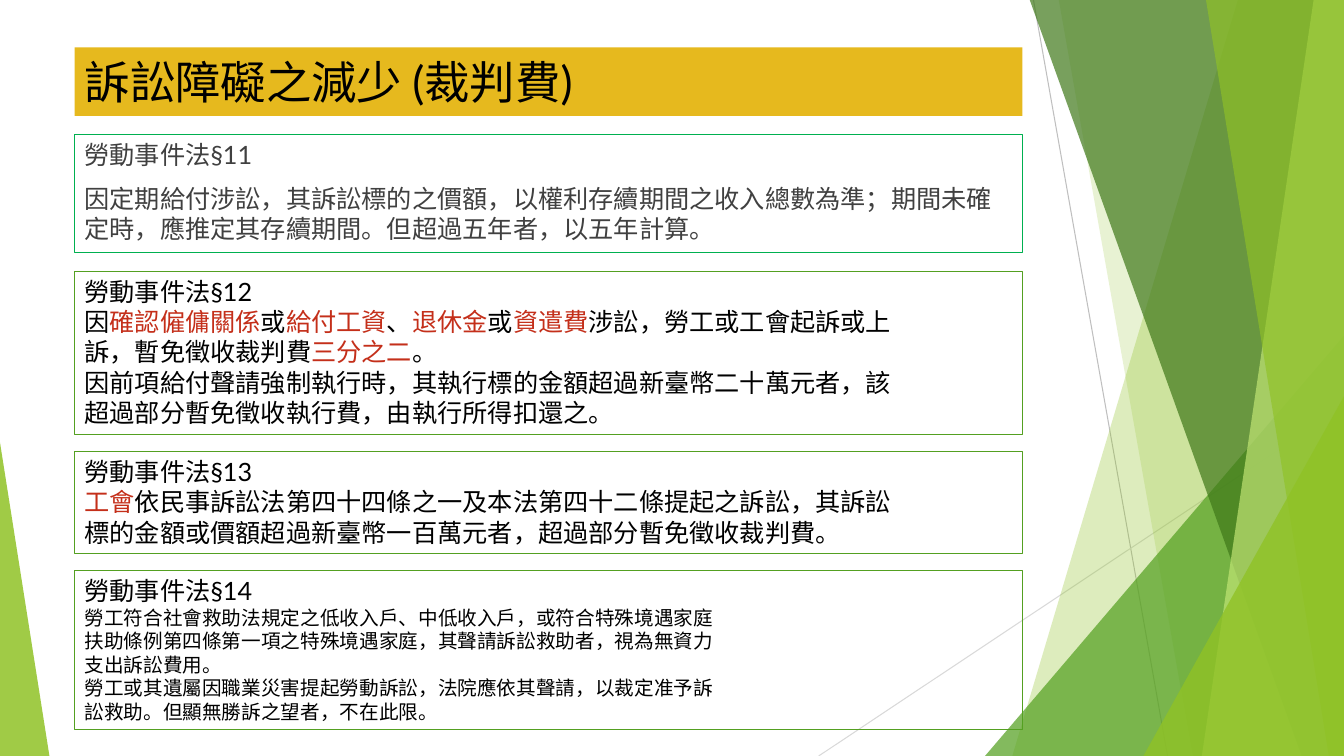
"""Build the slide on reduced court fees under the Labor Incident Act."""
from dataclasses import dataclass

from lxml import etree
from pptx import Presentation
from pptx.dml.color import RGBColor
from pptx.enum.shapes import MSO_CONNECTOR, MSO_SHAPE
from pptx.enum.text import MSO_ANCHOR, MSO_AUTO_SIZE, PP_ALIGN
from pptx.oxml.ns import qn
from pptx.util import Emu, Pt

PX = 9144
PAGE_WIDTH, PAGE_HEIGHT = 1333, 750
LEFT, WIDTH = 74, 940
FONT = "Lato"
BLACK, GRAY, RED, GOLD = "000000", "404040", "C42F1A", "E6B91E"
LIME, GREEN, DARK_GREEN, PALE_GREEN = "90C226", "54A021", "3F7819", "C0E474"
EMERALD = "00B050"
STRAIGHT = MSO_CONNECTOR.STRAIGHT
RECTANGLE, TRIANGLE = MSO_SHAPE.RECTANGLE, MSO_SHAPE.ISOSCELES_TRIANGLE
TOP, MIDDLE = MSO_ANCHOR.TOP, MSO_ANCHOR.MIDDLE
ALIGN_LEFT, NO_AUTOFIT = PP_ALIGN.LEFT, MSO_AUTO_SIZE.NONE


@dataclass(frozen=True)
class Ray:
    """A thin line between two points."""
    start: tuple[int, int]
    end: tuple[int, int]
    color: str


@dataclass(frozen=True)
class Band:
    """A translucent strip from a slanted edge to the right page edge."""
    top_x: int
    bottom_x: int
    color: str
    opacity: int


@dataclass(frozen=True)
class Wedge:
    """A translucent triangle standing on the bottom page edge."""
    left: int
    top: int
    width: int
    apex: int
    color: str
    opacity: int


@dataclass(frozen=True)
class Article:
    """A framed article of law; text between bars is red."""
    top: int
    height: int
    heading: str
    lines: tuple[str, ...]
    size: int = 18
    color: str = BLACK
    border: str = GREEN
    space_before: int = 0


RAYS = (
    Ray((1025, 0), (1158, 750), "BFBFBF"),
    Ray((1333, 403), (812, 750), "D9D9D9"),
)
BACKDROP = (
    Band(1228, 1004, LIME, 30),
    Band(1050, 1183, LIME, 20),
    Wedge(977, 333, 356, 1, GREEN, 72),
    Band(1021, 1291, DARK_GREEN, 70),
    Band(1303, 1192, PALE_GREEN, 70),
    Band(1196, 1318, LIME, 65),
    Wedge(1134, 393, 199, 1, LIME, 80),
    Wedge(0, 439, 49, 0, LIME, 85),
)
ARTICLES = (
    Article(133, 118, "勞動事件法§11", (
        "因定期給付涉訟，其訴訟標的之價額，以權利存續期間之收入總數為準；期間未確定時，應推定其存續期間。但超過五年者，以五年計算。",
    ), color=GRAY, border=EMERALD, space_before=10),
    Article(269, 162, "勞動事件法§12", (
        "因|確認僱傭關係|或|給付工資|、|退休金|或|資遣費|涉訟，勞工或工會起訴或上",
        "訴，暫免徵收裁判費|三分之二|。",
        "因前項給付聲請強制執行時，其執行標的金額超過新臺幣二十萬元者，該",
        "超過部分暫免徵收執行費，由執行所得扣還之。",
    )),
    Article(448, 101, "勞動事件法§13", (
        "|工會|依民事訴訟法第四十四條之一及本法第四十二條提起之訴訟，其訴訟",
        "標的金額或價額超過新臺幣一百萬元者，超過部分暫免徵收裁判費。",
    )),
    Article(566, 158, "勞動事件法§14", (
        "勞工符合社會救助法規定之低收入戶、中低收入戶，或符合特殊境遇家庭",
        "扶助條例第四條第一項之特殊境遇家庭，其聲請訴訟救助者，視為無資力",
        "支出訴訟費用。",
        "勞工或其遺屬因職業災害提起勞動訴訟，法院應依其聲請，以裁定准予訴",
        "訟救助。但顯無勝訴之望者，不在此限。",
    ), size=14),
)


def px(*lengths: int) -> list[Emu]:
    """Turn px lengths into EMU."""
    return [Emu(length * PX) for length in lengths]


def paint(target, color: str) -> None:
    """Give a fill one solid colour."""
    target.solid()
    target.fore_color.rgb = RGBColor.from_string(color)


def style_span(span, size: float, color: str) -> None:
    """Set the font of one run."""
    span.font.name = FONT
    span.font.size = Pt(size)
    paint(span.font.fill, color)


def draw_ray(page, ray: Ray) -> None:
    """Draw a thin line without a shadow."""
    line = page.shapes.add_connector(STRAIGHT, *px(*ray.start, *ray.end))
    paint(line.line.fill, ray.color)
    line.line.width = Pt(0.75)
    etree.SubElement(line._element.spPr, qn("a:effectLst"))


def draw_backdrop(page, part: Band | Wedge) -> None:
    """Draw a translucent band or wedge."""
    if isinstance(part, Band):
        builder = page.shapes.build_freeform(part.top_x, -1, scale=PX)
        builder.add_line_segments([
            (PAGE_WIDTH, -1), (PAGE_WIDTH, PAGE_HEIGHT), (part.bottom_x, PAGE_HEIGHT)])
        shape = builder.convert_to_shape()
    else:
        shape = page.shapes.add_shape(
            TRIANGLE, *px(part.left, part.top, part.width, PAGE_HEIGHT - part.top))
        shape.adjustments[0] = part.apex
    shape.shadow.inherit = False
    shape.line.fill.background()
    paint(shape.fill, part.color)
    color = shape._element.spPr.find(qn("a:solidFill"))[0]
    etree.SubElement(color, qn("a:alpha"), val=str(part.opacity * 1000))


def draw_title(page, text: str) -> None:
    """Move and format the title placeholder."""
    title = page.shapes.title
    title.left, title.top, title.width, title.height = px(LEFT, 47, WIDTH, 68)
    paint(title.fill, GOLD)
    frame = title.text_frame
    frame.text = text
    frame.auto_size = NO_AUTOFIT
    frame.vertical_anchor = MIDDLE
    frame.paragraphs[0].alignment = ALIGN_LEFT
    style_span(frame.paragraphs[0].runs[0], 32.4, BLACK)


def draw_article(page, article: Article) -> None:
    """Draw a framed article with its heading and lines."""
    box = page.shapes.add_shape(RECTANGLE, *px(LEFT, article.top, WIDTH, article.height))
    box.shadow.inherit = False
    box.fill.background()
    paint(box.line.fill, article.border)
    box.line.width = Pt(0.75)
    frame = box.text_frame
    frame.word_wrap = True
    frame.vertical_anchor = TOP
    frame.text = "\n".join((article.heading, *article.lines))
    for row, para in enumerate(frame.paragraphs):
        para.alignment = ALIGN_LEFT
        para.space_before = Pt(article.space_before)
        pieces = para.text.split("|")
        para.text = ""
        for order, piece in enumerate(pieces):
            if piece:
                span = para.add_run()
                span.text = piece
                style_span(span, article.size if row else 18,
                           RED if order % 2 else article.color)


def main() -> None:
    """Build and save the deck."""
    deck = Presentation()
    deck.slide_width, deck.slide_height = px(PAGE_WIDTH, PAGE_HEIGHT)
    page = deck.slides.add_slide(deck.slide_layouts.get_by_name("Title Only"))
    for ray in RAYS:
        draw_ray(page, ray)
    for part in BACKDROP:
        draw_backdrop(page, part)
    draw_title(page, "訴訟障礙之減少 (裁判費)")
    for article in ARTICLES:
        draw_article(page, article)
    deck.save("out.pptx")


if __name__ == "__main__":
    main()
